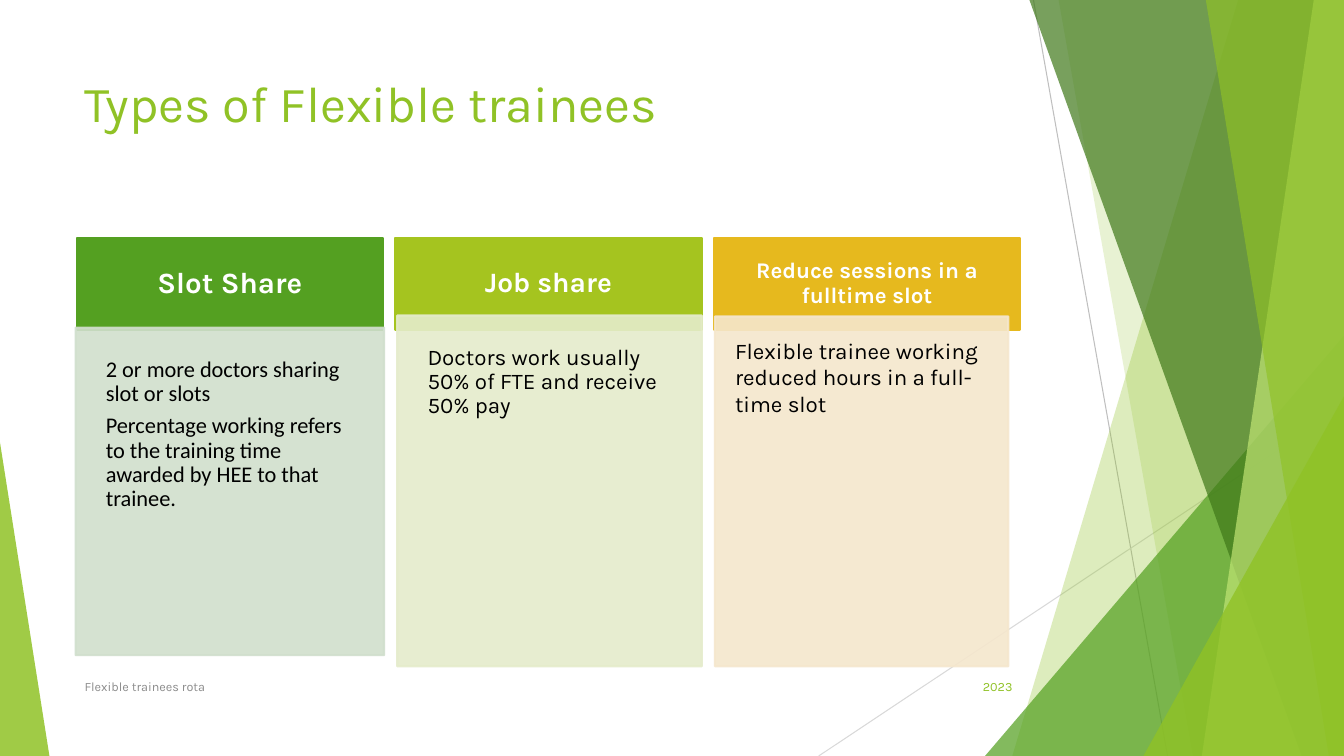
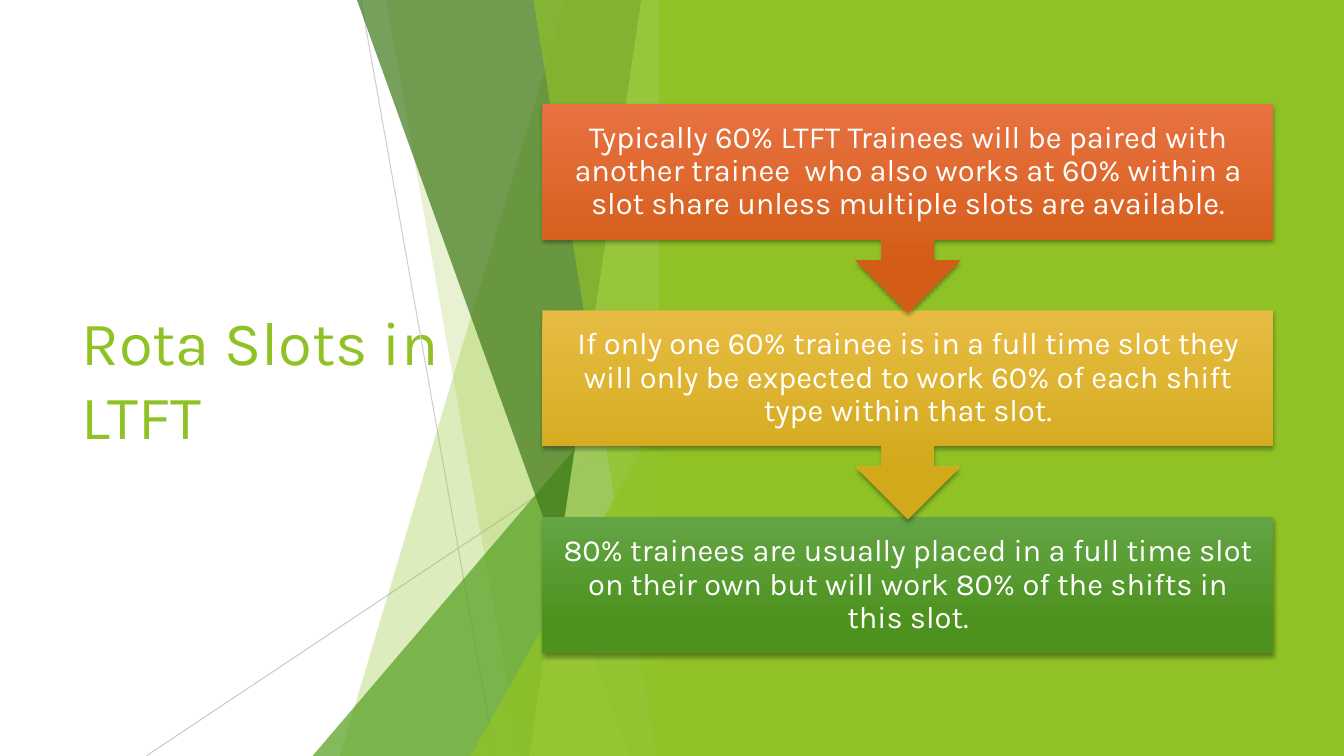
from lxml import etree
from pptx import Presentation
from pptx.dml.color import RGBColor
from pptx.enum.shapes import MSO_CONNECTOR, MSO_SHAPE
from pptx.enum.text import MSO_ANCHOR, PP_ALIGN
from pptx.oxml.ns import qn
from pptx.util import Inches, Pt

RECT, WEDGE = MSO_SHAPE.RECTANGLE, MSO_SHAPE.ISOSCELES_TRIANGLE
CALLOUT = MSO_SHAPE.DOWN_ARROW_CALLOUT
STRAIGHT = MSO_CONNECTOR.STRAIGHT
LEFT, CENTER, RIGHT = PP_ALIGN.LEFT, PP_ALIGN.CENTER, PP_ALIGN.RIGHT
TOP, MIDDLE = MSO_ANCHOR.TOP, MSO_ANCHOR.MIDDLE

WIDE, HIGH = 13.33, 7.5
FONT = "Karla"
LIME, GREEN, FOREST, PALE = "90C226", "54A021", "3F7819", "C0E474"
WHITE, BLACK, GREY = "FFFFFF", "000000", "8C8C8C"

FACET = 5.21
SHARDS = [
    ("panel", 4.16, 1.92, LIME, 30),
    ("panel", 2.38, 3.71, LIME, 20),
    ("wedge", 1.65, 3.33, GREEN, 72),
    ("panel", 2.09, 4.79, FOREST, 70),
    ("panel", 4.91, 3.80, PALE, 70),
    ("panel", 3.84, 5.06, LIME, 65),
    ("wedge", 3.22, 3.93, LIME, 80),
]

TYPES = [
    ("Slot Share", 21, GREEN, "D1DFCD", (0.75, 3.25, 3.06, 3.25), 0.3, 0.9, "Calibri",
     ["2 or more doctors sharing slot or slots",
      "Percentage working refers to the training time awarded by HEE to that trainee."]),
    ("Job share", 20, "A5C41F", "E5ECCB", (3.94, 3.13, 3.02, 3.48), 0.3, 0.9, FONT,
     ["Doctors work usually 50% of FTE and receive 50% pay"]),
    ("Reduce sessions in a fulltime slot", 16, "E6B91E", "F5E7CD",
     (7.09, 3.14, 2.91, 3.47), 0.2, 1.0, FONT,
     ["Flexible trainee working reduced hours in a full-time slot"]),
]

STEPS = [
    ("Typically 60% LTFT Trainees will be paired with another trainee  who also works "
     "at 60% within a slot share unless multiple slots are available.",
     "E87242", "D35D16"),
    ("If only one 60% trainee is in a full time slot they will only be expected to work "
     "60% of each shift type within that slot.",
     "E7BC43", "D2A91B"),
    ("80% trainees are usually placed in a full time slot on their own but will work "
     "80% of the shifts in this slot.",
     "63A545", "4D921E"),
]


def rgb(code):
    """Turn a hex string into a colour."""
    return RGBColor.from_string(code)


def place(box):
    """Turn a box in inches into lengths."""
    return [Inches(part) for part in box]


def fade(part, alpha):
    """Make every colour below an element partly see-through."""
    for tone in part.iter(qn("a:srgbClr")):
        etree.SubElement(tone, qn("a:alpha")).set("val", str(alpha * 1000))


def paint(shape, code, alpha=100, edge=0):
    """Give a shape a flat fill, with an edge of the same colour or none."""
    shape.shadow.inherit = False
    shape.fill.solid()
    shape.fill.fore_color.rgb = rgb(code)
    if edge:
        shape.line.color.rgb = rgb(code)
        shape.line.width = Pt(edge)
    else:
        shape.line.fill.background()
    if alpha < 100:
        fade(shape.element.spPr, alpha)


def block(slide, kind, box, code, alpha=100, edge=0):
    """Add a flat preset shape."""
    shape = slide.shapes.add_shape(kind, *place(box))
    paint(shape, code, alpha, edge)
    return shape


def write(shape, lines, size, code, font=FONT, bold=False, align=LEFT,
          anchor=TOP, inset=None, lead=1.0, after=0):
    """Set and format the text of a shape."""
    frame = shape.text_frame
    frame.word_wrap = True
    frame.vertical_anchor = anchor
    if inset is not None:
        frame.margin_left = frame.margin_right = Inches(inset)
        frame.margin_top = frame.margin_bottom = Inches(inset)
    frame.text = "\n".join(lines)
    for para in frame.paragraphs:
        para.alignment = align
        para.line_spacing = lead
        para.space_after = Pt(after)
        for run in para.runs:
            run.font.name = font
            run.font.size = Pt(size)
            run.font.bold = bold
            run.font.color.rgb = rgb(code)


def label(slide, box, text, size, code, **style):
    """Add a text box."""
    write(slide.shapes.add_textbox(*place(box)), [text], size, code, **style)


def title(slide, box, text, size, anchor):
    """Add the slide title."""
    label(slide, box, text, size, LIME, anchor=anchor)


def rule(slide, start, end, code):
    """Add a thin straight line."""
    line = slide.shapes.add_connector(STRAIGHT, *place(start + end))
    line.line.color.rgb = rgb(code)
    line.line.width = Pt(0.75)
    etree.SubElement(line.element.spPr, qn("a:effectLst"))


def wedge(slide, box, code, alpha, tip):
    """Add a right triangle with its tip at one side."""
    block(slide, WEDGE, box, code, alpha).adjustments[0] = tip


def panel(slide, high, low, edge, code, alpha):
    """Add a full-height panel with a slanted left side."""
    pen = slide.shapes.build_freeform(Inches(high), 0, scale=1.0)
    spots = [(edge, 0), (edge, HIGH), (low, HIGH)]
    pen.add_line_segments([place(spot) for spot in spots], close=True)
    paint(pen.convert_to_shape(), code, alpha)


def facets(slide, left, tones):
    """Draw the band of overlapping shards from its left edge."""
    edge = left + FACET
    rule(slide, (left + 2.13, 0), (left + 3.46, HIGH), tones[0])
    rule(slide, (edge, 4.03), (left, HIGH), tones[1])
    for kind, first, second, code, alpha in SHARDS:
        if kind == "panel":
            panel(slide, left + first, left + second, edge, code, alpha)
        else:
            box = (left + first, second, FACET - first, HIGH - second)
            wedge(slide, box, code, alpha, 1)


def footer(slide, box, text, year):
    """Add the footer text and the year at the ends of a strip."""
    left, top, width, height = box
    label(slide, box, text, 9, GREY, anchor=MIDDLE)
    label(slide, (left + width - 0.75, top, 0.75, height), year, 9, LIME,
          align=RIGHT, anchor=MIDDLE)


def columns(slide, left, top):
    """Draw the headed columns."""
    for spot, (head, size, dark, light, box, inset, lead, font, lines) in enumerate(TYPES):
        bar = block(slide, RECT, (left + 3.16 * spot, top, 3.04, 0.91), dark, edge=1.5)
        write(bar, [head], size, WHITE, bold=True, align=CENTER, anchor=MIDDLE,
              inset=0.24, lead=0.9)
        body = block(slide, RECT, box, light, 90, 1.5)
        write(body, lines, 16, BLACK, font, inset=inset, lead=lead, after=6)


def shade(shape, light, dark):
    """Give a shape a downward gradient and a soft shadow."""
    shape.line.fill.background()
    shape.fill.gradient()
    shape.fill.gradient_angle = 270
    for stop, code, spot in zip(shape.fill.gradient_stops, (light, dark), (0, 0.78)):
        stop.color.rgb = rgb(code)
        stop.position = spot
    shape.shadow.inherit = False
    cast = etree.SubElement(shape.element.spPr.find(qn("a:effectLst")), qn("a:outerShdw"))
    for key, value in (("blurRad", Pt(3)), ("dist", Pt(2)), ("dir", 5400000)):
        cast.set(key, str(int(value)))
    etree.SubElement(cast, qn("a:srgbClr")).set("val", BLACK)
    fade(cast, 35)


def flow(slide, left, top, width):
    """Stack the steps, each pointing down to the next."""
    last = len(STEPS) - 1
    for spot in range(last, -1, -1):
        text, light, dark = STEPS[spot]
        kind, height = (RECT, 1.35) if spot == last else (CALLOUT, 2.07)
        box = (left, top + 2.05 * spot, width, height)
        step = slide.shapes.add_shape(kind, *place(box))
        shade(step, light, dark)
        write(step, [text], 22, WHITE, align=CENTER, anchor=MIDDLE, inset=0.17, lead=0.9)


def types(slide):
    """Build the slide of trainee types."""
    facets(slide, WIDE - FACET, ("BFBFBF", "D9D9D9"))
    wedge(slide, (0, 4.39, 0.49, 3.11), LIME, 85, 0)
    title(slide, (0.74, 0.67, 9.4, 1.44), "Types of Flexible trainees", 36, TOP)
    columns(slide, 0.76, 2.36)
    footer(slide, (0.74, 6.61, 9.4, 0.4), "Flexible trainees rota", "2023")


def slots(slide):
    """Build the slide of rota slots."""
    title(slide, (0.71, 1.51, 3.88, 4.48), "Rota Slots in LTFT", 44, MIDDLE)
    facets(slide, 1.45, ("CFCFCF", "CCCCCC"))
    block(slide, RECT, (6.54, 0, WIDE - 6.54, HIGH), LIME)
    flow(slide, 5.38, 1.03, 7.25)


def main():
    """Build and save the slides."""
    deck = Presentation()
    deck.slide_width, deck.slide_height = place((WIDE, HIGH))
    for build in (types, slots):
        build(deck.slides.add_slide(deck.slide_layouts[6]))
    deck.save("out.pptx")


if __name__ == "__main__":
    main()
